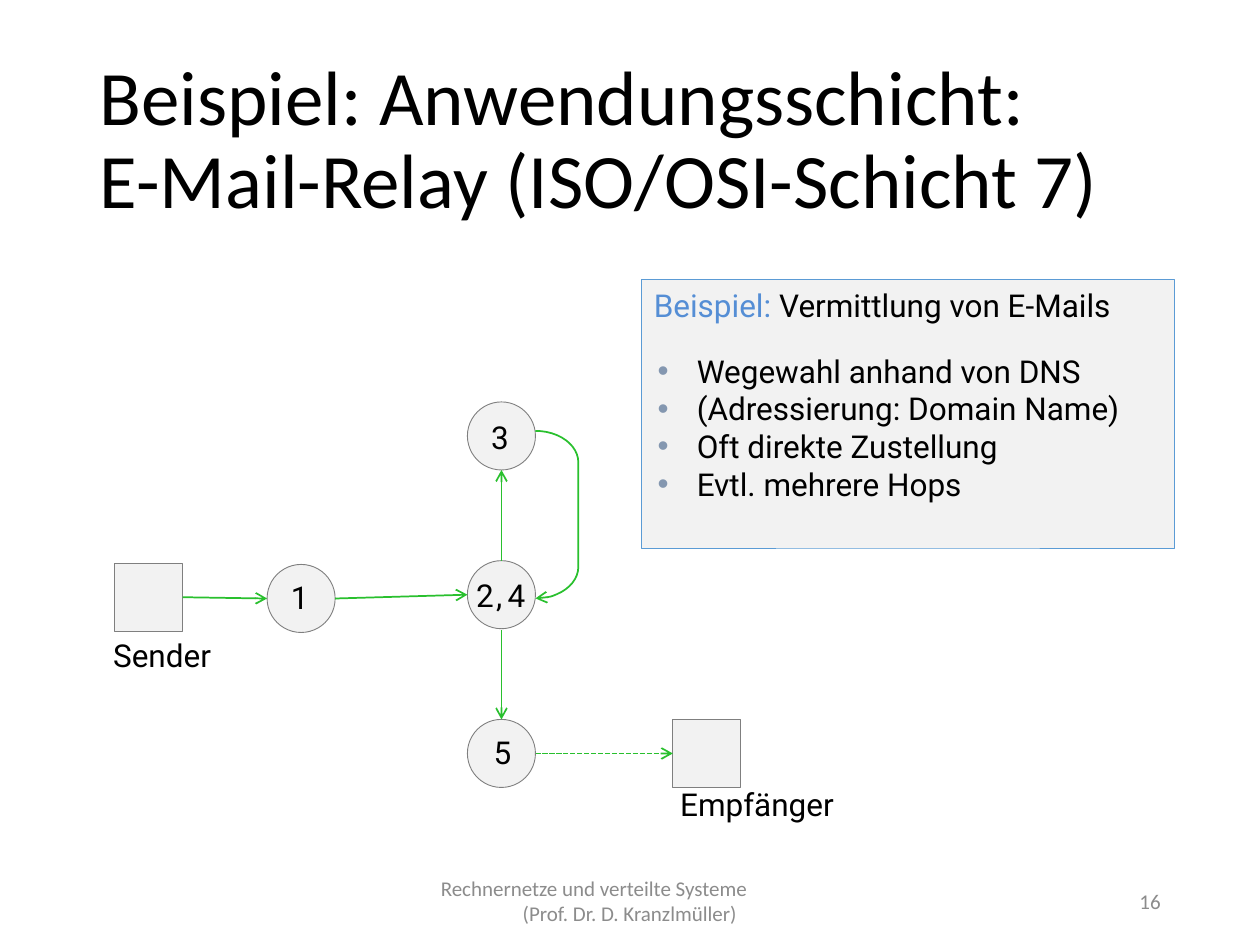
from dataclasses import dataclass

from lxml.etree import SubElement
from pptx import Presentation
from pptx.dml.color import RGBColor
from pptx.enum.dml import MSO_LINE
from pptx.enum.shapes import MSO_CONNECTOR, MSO_SHAPE
from pptx.enum.text import MSO_ANCHOR, MSO_AUTO_SIZE, PP_ALIGN
from pptx.oxml.ns import qn
from pptx.util import Pt

EMU_PER_PX = 9144


def px(length):
    return length * EMU_PER_PX


@dataclass(frozen=True)
class Theme:
    heading_font: str = "Calibri"
    text_font: str = "Roboto"
    title_size: int = 44
    text_size: int = 18
    footer_size: int = 12
    black: str = "000000"
    accent: str = "558ED5"
    bullet: str = "8497B0"
    footer: str = "8C8C8C"
    fill: str = "F2F2F2"
    outline: str = "7F7F7F"
    panel_outline: str = "5B9BD5"
    arrow: str = "29C02E"


class SlideBuilder:
    def __init__(self, presentation, theme):
        self.theme = theme
        self.slide = presentation.slides.add_slide(presentation.slide_layouts[1])

    def apply(self, target, values):
        for name, value in values.items():
            setattr(target, name, value)

    def place(self, shape, box):
        self.apply(shape, dict(zip(("left", "top", "width", "height"), map(px, box))))

    def add_text(self, paragraph, text, size=None, font=None, color=None):
        run = paragraph.add_run()
        run.text = text
        self.apply(run.font, {
            "size": Pt(size or self.theme.text_size),
            "name": font or self.theme.text_font,
        })
        run.font.color.rgb = RGBColor.from_string(color or self.theme.black)

    def add_lines(self, paragraph, lines, **style):
        for index, line in enumerate(lines):
            if index:
                paragraph.add_line_break()
            self.add_text(paragraph, line, **style)

    def indent(self, paragraph, margin, first):
        properties = paragraph._p.get_or_add_pPr()
        properties.set("marL", str(px(margin)))
        properties.set("indent", str(px(first)))
        return properties

    def title(self, box, lines):
        shape = self.slide.shapes.title
        self.place(shape, box)
        self.apply(shape.text_frame, {
            "word_wrap": True,
            "auto_size": MSO_AUTO_SIZE.NONE,
            "vertical_anchor": MSO_ANCHOR.MIDDLE,
        })
        paragraph = shape.text_frame.paragraphs[0]
        self.apply(paragraph, {"alignment": PP_ALIGN.LEFT, "line_spacing": 0.9})
        self.add_lines(paragraph, lines, size=self.theme.title_size,
                       font=self.theme.heading_font)

    def bullets(self, box, items):
        shape = self.slide.placeholders[1]
        self.slide.shapes._spTree.append(shape._element)
        self.place(shape, box)
        frame = shape.text_frame
        self.apply(frame, {"word_wrap": True, "auto_size": MSO_AUTO_SIZE.NONE})
        for index, item in enumerate(items):
            paragraph = frame.add_paragraph() if index else frame.paragraphs[0]
            properties = self.indent(paragraph, 31, -31)
            color = SubElement(properties, qn("a:buClr"))
            SubElement(color, qn("a:srgbClr"), val=self.theme.bullet)
            SubElement(properties, qn("a:buChar"), char="•")
            self.apply(paragraph, {"space_before": Pt(0)})
            self.add_text(paragraph, item)

    def text(self, box, runs, wrap=True):
        shape = self.slide.shapes.add_textbox(*map(px, box))
        shape.text_frame.word_wrap = wrap
        paragraph = shape.text_frame.paragraphs[0]
        for content, color in runs:
            self.add_text(paragraph, content, color=color)

    def footer(self, box, lines, alignment, margin=0, first=0):
        shape = self.slide.shapes.add_textbox(*map(px, box))
        self.apply(shape.text_frame, {
            "word_wrap": True, "vertical_anchor": MSO_ANCHOR.MIDDLE})
        paragraph = shape.text_frame.paragraphs[0]
        paragraph.alignment = alignment
        self.indent(paragraph, margin, first)
        self.add_lines(paragraph, lines, size=self.theme.footer_size,
                       font=self.theme.heading_font, color=self.theme.footer)

    def box(self, kind, box, outline=None):
        shape = self.slide.shapes.add_shape(kind, *map(px, box))
        shape.shadow.inherit = False
        shape.fill.solid()
        shape.fill.fore_color.rgb = RGBColor.from_string(self.theme.fill)
        self.stroke(shape, outline or self.theme.outline, 0.5)

    def stroke(self, shape, color, width):
        shape.line.color.rgb = RGBColor.from_string(color)
        shape.line.width = Pt(width)

    def arrowhead(self, shape):
        self.stroke(shape, self.theme.arrow, 1)
        SubElement(shape.line._get_or_add_ln(), qn("a:tailEnd"), type="arrow")

    def arrow(self, start, end, dash=None):
        connector = self.slide.shapes.add_connector(
            MSO_CONNECTOR.STRAIGHT, *map(px, start + end))
        if dash:
            connector.line.dash_style = dash
        self.arrowhead(connector)
        SubElement(connector._element.spPr, qn("a:effectLst"))

    def return_arrow(self, box, curve):
        shape = self.slide.shapes.add_shape(MSO_SHAPE.RIGHT_BRACKET, *map(px, box))
        shape.adjustments[0] = curve
        shape.fill.background()
        self.arrowhead(shape)
        shape.shadow.inherit = False


def main():
    presentation = Presentation()
    presentation.slide_width, presentation.slide_height = px(1000), px(750)
    theme = Theme()
    builder = SlideBuilder(presentation, theme)
    builder.title((69, 40, 862, 145), [
        "Beispiel: Anwendungsschicht:", "E-Mail-Relay (ISO/OSI-Schicht 7)"])

    builder.box(MSO_SHAPE.RECTANGLE, (509, 222, 423, 213), theme.panel_outline)
    builder.text((509, 222, 395, 40), [
        ("Beispiel: ", theme.accent), ("Vermittlung von E-Mails", theme.black)], wrap=False)
    builder.bullets((512, 274, 396, 131), [
        "Wegewahl anhand von DNS", "(Adressierung: Domain Name)",
        "Oft direkte Zustellung", "Evtl. mehrere Hops"])

    node = 54
    for left, top in ((91, 447), (534, 571)):
        builder.box(MSO_SHAPE.RECTANGLE, (left, top, node, node))
    for left, top in ((212, 448), (371, 445), (371, 319), (371, 571)):
        builder.box(MSO_SHAPE.OVAL, (left, top, node, node))

    for start, end in (((145, 474), (212, 475)), ((266, 475), (371, 472)),
                       ((398, 445), (398, 373)), ((398, 500), (398, 571))):
        builder.arrow(start, end)
    builder.arrow((425, 598), (534, 598), MSO_LINE.SQUARE_DOT)
    builder.return_arrow((425, 342, 34, 133), 0.734)

    for label, left, top, width in (
            ("Sender", 80, 500, 104), ("Empfänger", 530, 618, 176),
            ("1", 221, 454, 47), ("2", 368, 452, 47), (",", 384, 452, 47),
            ("4", 393, 452, 32), ("3", 380, 327, 47), ("5", 382, 577, 31)):
        builder.text((left, top, width, 40), [(label, theme.black)])

    builder.footer((331, 695, 338, 40), [
        "Rechnernetze und verteilte Systeme", "(Prof. Dr. D. Kranzlmüller)"],
        PP_ALIGN.LEFT, margin=74, first=-65)
    builder.footer((706, 695, 225, 40), ["16"], PP_ALIGN.RIGHT)
    presentation.save("out.pptx")


if __name__ == "__main__":
    main()
